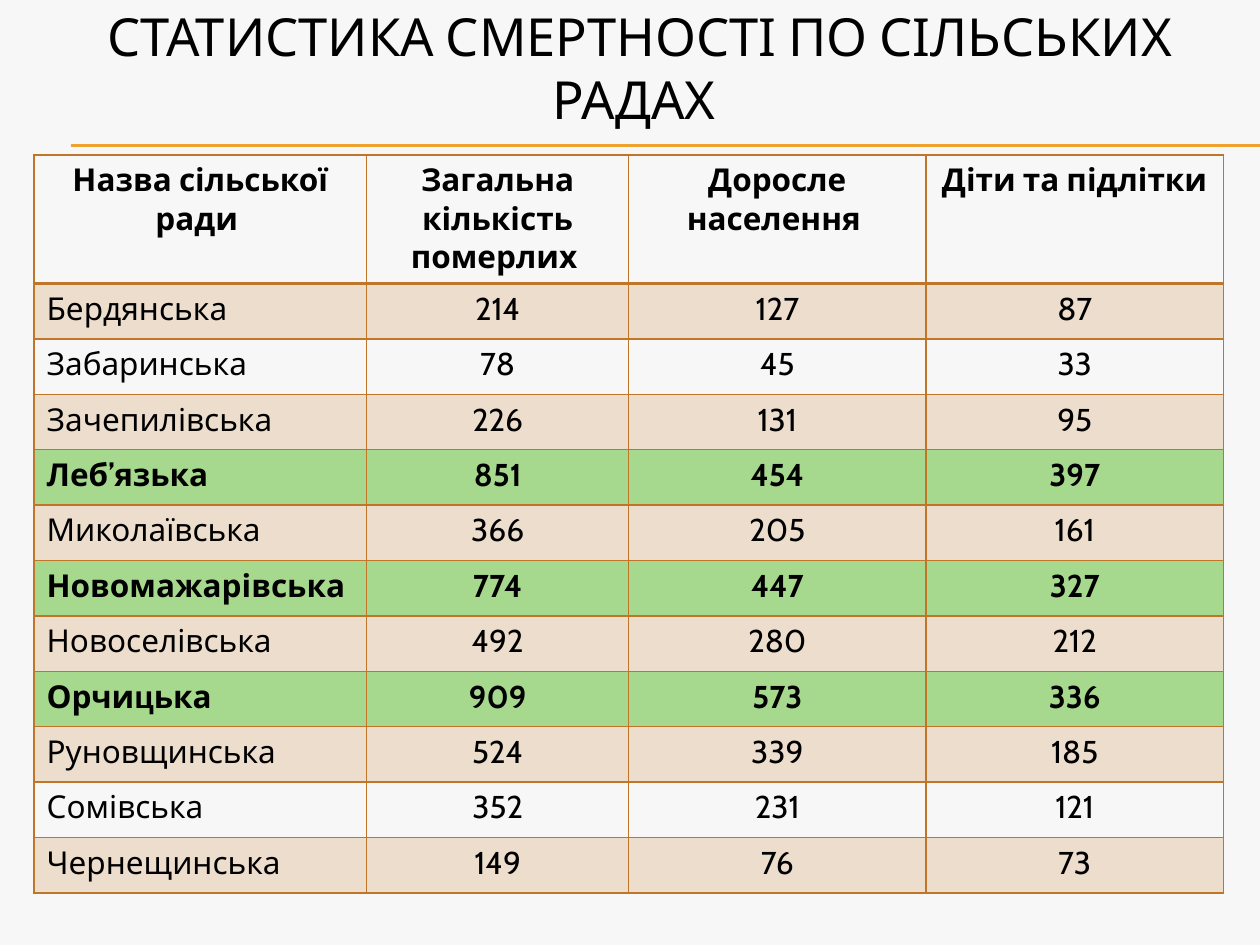
import pptx
import pptx.util
import pptx.dml.color
import pptx.enum.text
import pptx.enum.shapes
import pptx.oxml
import pptx.oxml.ns

Inches = pptx.util.Inches
Pt = pptx.util.Pt
RGBColor = pptx.dml.color.RGBColor
CENTER = pptx.enum.text.PP_ALIGN.CENTER
LEFT = pptx.enum.text.PP_ALIGN.LEFT
NS = pptx.oxml.ns.nsdecls("a")

PAPER = RGBColor(0xF7, 0xF7, 0xF7)
BLACK = RGBColor(0, 0, 0)
GOLD = RGBColor(0xF0, 0xA2, 0x2E)
BROWN = RGBColor(0xC1, 0x75, 0x29)
GREEN = RGBColor(0xA6, 0xD9, 0x8D)

HEADS = ["Назва сільської ради ", "Загальна кількість померлих ",
         "Доросле населення ", "Діти та підлітки "]
ROWS = [
    ("Бердянська", 214, 127, 87),
    ("Забаринська", 78, 45, 33),
    ("Зачепилівська", 226, 131, 95),
    ("Леб’язька", 851, 454, 397),
    ("Миколаївська", 366, 205, 161),
    ("Новомажарівська", 774, 447, 327),
    ("Новоселівська", 492, 280, 212),
    ("Орчицька", 909, 573, 336),
    ("Руновщинська", 524, 339, 185),
    ("Сомівська", 352, 231, 121),
    ("Чернещинська", 149, 76, 73),
]
PEAKS = {"Леб’язька", "Новомажарівська", "Орчицька"}
WIDTHS = [2.64, 2.08, 2.36, 2.36]


def style(para, size, bold, align):
    para.alignment = align
    para.font.name = "Cabin"
    para.font.size = Pt(size)
    para.font.bold = bold
    para.font.color.rgb = BLACK


def edge(cell, side, width):
    cell._tc.get_or_add_tcPr().append(pptx.oxml.parse_xml(
        f'<a:ln{side} {NS} w="{Pt(width)}"><a:solidFill>'
        f'<a:srgbClr val="{BROWN}"/></a:solidFill></a:ln{side}>'))


deck = pptx.Presentation()
deck.slide_width = Inches(10)
deck.slide_height = Inches(7.5)
slide = deck.slides.add_slide(deck.slide_layouts[5])
slide.background.fill.solid()
slide.background.fill.fore_color.rgb = PAPER

for y in (1.15, 1.16):
    rule = slide.shapes.add_connector(
        pptx.enum.shapes.MSO_CONNECTOR.STRAIGHT,
        Inches(0.56), Inches(y), Inches(10), Inches(y))
    rule.line.color.rgb = GOLD
    rule.line.width = Pt(0.75)
    rule._element.spPr.append(pptx.oxml.parse_xml(f"<a:effectLst {NS}/>"))

title = slide.shapes.title
title.left, title.top = Inches(0.33), Inches(0)
title.width, title.height = Inches(9.5), Inches(1.07)
title.text_frame.text = "СТАТИСТИКА СМЕРТНОСТІ ПО СІЛЬСЬКИХ РАДАХ "
title.text_frame.vertical_anchor = pptx.enum.text.MSO_ANCHOR.MIDDLE
style(title.text_frame.paragraphs[0], 30, False, CENTER)

table = slide.shapes.add_table(
    len(ROWS) + 1, len(HEADS), Inches(0.27), Inches(1.23),
    Inches(sum(WIDTHS)), Inches(5.87)).table
for col, width in zip(table.columns, WIDTHS):
    col.width = Inches(width)

for r, row in enumerate([HEADS, *ROWS]):
    table.rows[r].height = Inches(0.44 if r else 1.02)
    peak = row[0] in PEAKS
    for c, value in enumerate(row):
        cell = table.cell(r, c)
        para = cell.text_frame.paragraphs[0]
        style(para, 18, r == 0 or peak, LEFT if r and c == 0 else CENTER)
        for part in filter(None, str(value).partition("ц")):
            run = para.add_run()
            run.text = part
            if part == "ц":
                run.font.name = "Arial"
        for side in "LRTB":
            heavy = (r, side) in ((0, "B"), (1, "T"))
            edge(cell, side, 2 if heavy else 1)
        if peak:
            cell.fill.solid()
            cell.fill.fore_color.rgb = GREEN
        elif r % 2:
            cell.fill.solid()
            cell.fill.fore_color.rgb = BROWN
            tint = cell._tc.get_or_add_tcPr()[-1][0]
            tint.append(pptx.oxml.parse_xml(f'<a:alpha {NS} val="20000"/>'))
        else:
            cell.fill.background()

deck.save("out.pptx")
